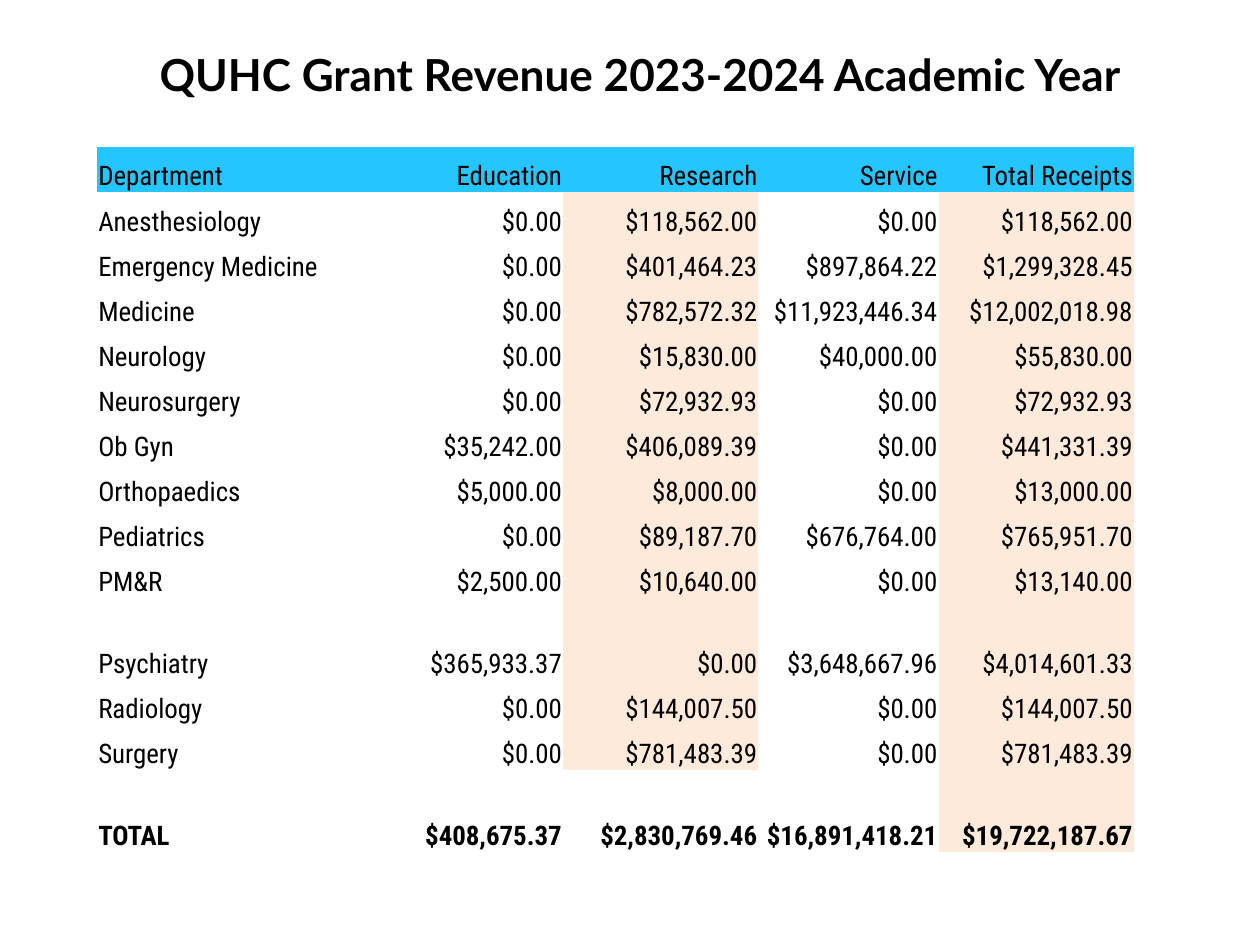
from dataclasses import dataclass

from pptx import Presentation
from pptx.dml.color import RGBColor
from pptx.enum.text import MSO_ANCHOR, PP_ALIGN
from pptx.oxml.ns import qn
from pptx.slide import Slide
from pptx.util import Inches, Pt

COLORS = {"text": "000000", "header": "25C6FF", "accent": "FDEADA"}
NO_GRID_STYLE = "{2D5ABB26-0587-4C30-8999-92F81FD0307C}"
COLUMN_WIDTHS = [2.54, 1.16, 1.55, 1.43, 1.55]
TABLE_HEIGHT = 5.59
TALL_ROW = 0.65
TALL_DEPARTMENTS = ("Psychiatry", "TOTAL")
REVENUE = [
    ("Department", "Education", "Research", "Service", "Total Receipts"),
    ("Anesthesiology", "$0.00", "$118,562.00", "$0.00", "$118,562.00"),
    ("Emergency Medicine", "$0.00", "$401,464.23", "$897,864.22", "$1,299,328.45"),
    ("Medicine", "$0.00", "$782,572.32", "$11,923,446.34", "$12,002,018.98"),
    ("Neurology", "$0.00", "$15,830.00", "$40,000.00", "$55,830.00"),
    ("Neurosurgery", "$0.00", "$72,932.93", "$0.00", "$72,932.93"),
    ("Ob Gyn", "$35,242.00", "$406,089.39", "$0.00", "$441,331.39"),
    ("Orthopaedics", "$5,000.00", "$8,000.00", "$0.00", "$13,000.00"),
    ("Pediatrics", "$0.00", "$89,187.70", "$676,764.00", "$765,951.70"),
    ("PM&R", "$2,500.00", "$10,640.00", "$0.00", "$13,140.00"),
    ("Psychiatry", "$365,933.37", "$0.00", "$3,648,667.96", "$4,014,601.33"),
    ("Radiology", "$0.00", "$144,007.50", "$0.00", "$144,007.50"),
    ("Surgery", "$0.00", "$781,483.39", "$0.00", "$781,483.39"),
    ("TOTAL", "$408,675.37", "$2,830,769.46", "$16,891,418.21", "$19,722,187.67"),
]


def cell_color(row, column):
    if row == 0:
        return "header"
    is_total = row == len(REVENUE) - 1
    if column == 4 or (column == 2 and not is_total):
        return "accent"
    return None


@dataclass
class RevenueSlide:
    """Holds the text style and the slide being built."""

    slide: Slide
    title_font: str = "Lato"
    table_font: str = "Roboto Condensed"

    def set_text(self, frame, text, font, size, align, bold=False):
        frame.text = text
        paragraph = frame.paragraphs[0]
        paragraph.alignment = align
        style = paragraph.runs[0].font
        style.name, style.size, style.bold = font, Pt(size), bold
        style.color.rgb = RGBColor.from_string(COLORS["text"])

    def add_title(self, text, left, top, width, height):
        box = self.slide.shapes.add_textbox(
            Inches(left), Inches(top), Inches(width), Inches(height))
        frame = box.text_frame
        frame.word_wrap = True
        frame.margin_left = frame.margin_right = 0
        frame.margin_top = frame.margin_bottom = 0
        self.set_text(frame, text, self.title_font, 25.2, PP_ALIGN.CENTER, True)

    def add_cell(self, cell, text, align, bold, color):
        cell.margin_left = cell.margin_right = cell.margin_top = Inches(0.01)
        cell.margin_bottom = 0
        cell.vertical_anchor = MSO_ANCHOR.BOTTOM
        if color:
            cell.fill.solid()
            cell.fill.fore_color.rgb = RGBColor.from_string(COLORS[color])
        else:
            cell.fill.background()
        self.set_text(cell.text_frame, text, self.table_font, 15.4, align, bold)

    def add_revenue_table(self, left, top):
        frame = self.slide.shapes.add_table(
            len(REVENUE), len(COLUMN_WIDTHS), Inches(left), Inches(top),
            Inches(sum(COLUMN_WIDTHS)), Inches(TABLE_HEIGHT))
        table = frame.table
        table.first_row = table.horz_banding = False
        for style_id in frame.element.iter(qn("a:tableStyleId")):
            style_id.text = NO_GRID_STYLE
        for column, width in zip(table.columns, COLUMN_WIDTHS):
            column.width = Inches(width)
        tall_count = len(TALL_DEPARTMENTS)
        row_height = (TABLE_HEIGHT - tall_count * TALL_ROW) / (len(REVENUE) - tall_count)
        for row, values in enumerate(REVENUE):
            is_tall = values[0] in TALL_DEPARTMENTS
            table.rows[row].height = Inches(TALL_ROW if is_tall else row_height)
            for column, value in enumerate(values):
                self.add_cell(
                    table.cell(row, column), value,
                    PP_ALIGN.RIGHT if column else PP_ALIGN.LEFT,
                    values[0] == "TOTAL", cell_color(row, column))


def main():
    deck = Presentation()
    deck.slide_width, deck.slide_height = Inches(10), Inches(7.5)
    revenue = RevenueSlide(deck.slides.add_slide(deck.slide_layouts[6]))
    revenue.add_title("QUHC Grant Revenue 2023-2024 Academic Year", 0.77, 0.38, 8.62, 0.58)
    revenue.add_revenue_table(0.77, 1.17)
    deck.save("out.pptx")


if __name__ == "__main__":
    main()
